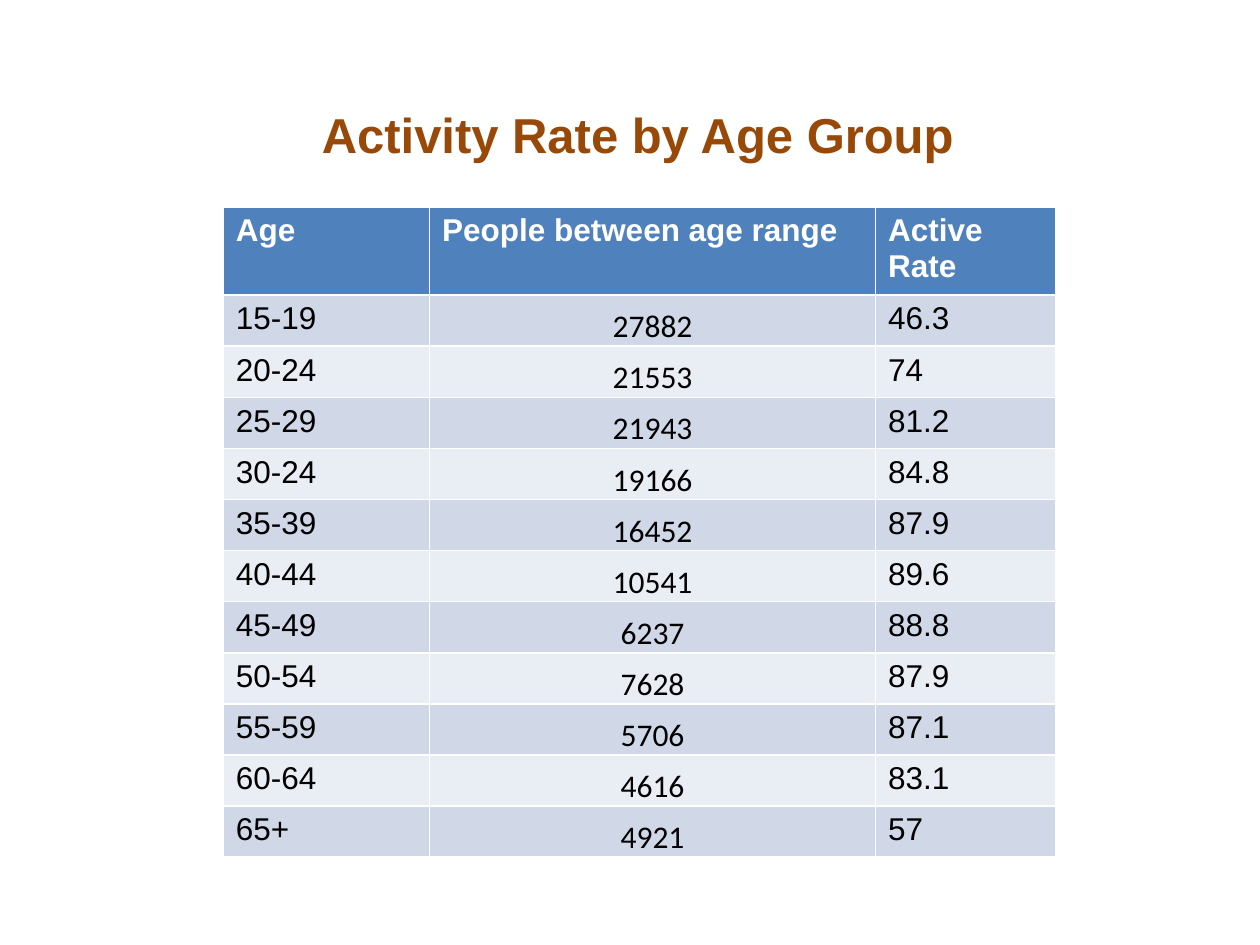
import pptx
import pptx.dml.color
import pptx.enum.text
import pptx.util

Cm = pptx.util.Cm
Pt = pptx.util.Pt
Align = pptx.enum.text.PP_ALIGN
Anchor = pptx.enum.text.MSO_ANCHOR

HEADINGS = ("Age", "People between age range", "Active Rate")
AGE_GROUPS = [
    ("15-19", "27882", "46.3"),
    ("20-24", "21553", "74"),
    ("25-29", "21943", "81.2"),
    ("30-24", "19166", "84.8"),
    ("35-39", "16452", "87.9"),
    ("40-44", "10541", "89.6"),
    ("45-49", "6237", "88.8"),
    ("50-54", "7628", "87.9"),
    ("55-59", "5706", "87.1"),
    ("60-64", "4616", "83.1"),
    ("65+", "4921", "57"),
]
COLUMN_WIDTHS = (4.16, 8.99, 3.63)
ROW_HEIGHT = 1.03
PEOPLE_COLUMN = 1
HEADER_FILL = "4F81BD"
BAND_FILLS = ("E9EDF4", "D0D8E8")


def color(value):
    return pptx.dml.color.RGBColor.from_string(value)


def style_font(para, name, size, value, bold=False):
    para.font.name = name
    para.font.size = Pt(size)
    para.font.bold = bold
    para.font.color.rgb = color(value)


def add_title(page, text):
    title = page.shapes.title
    title.left, title.top = Cm(1.3), Cm(1.98)
    title.width, title.height = Cm(23.11), Cm(1.45)
    title.text_frame.text = text
    title.text_frame.auto_size = pptx.enum.text.MSO_AUTO_SIZE.SHAPE_TO_FIT_TEXT
    para = title.text_frame.paragraphs[0]
    para.alignment = Align.CENTER
    style_font(para, "Arial", 28, "984807", bold=True)


def fill_cell(cell, text, fill):
    cell.text = text
    cell.fill.solid()
    cell.fill.fore_color.rgb = color(fill)
    return cell.text_frame.paragraphs[0]


def fill_header_cell(cell, text):
    para = fill_cell(cell, text, HEADER_FILL)
    style_font(para, "Arial", 18, "FFFFFF", bold=True)


def fill_body_cell(cell, text, fill, is_count):
    para = fill_cell(cell, text, fill)
    style_font(para, "Calibri" if is_count else "Arial", 18, "000000")
    if is_count:
        para.alignment = Align.CENTER
        cell.vertical_anchor = Anchor.BOTTOM
        cell.margin_left = cell.margin_right = cell.margin_top = Cm(0.03)
        cell.margin_bottom = 0


def add_rate_table(page):
    row_count = len(AGE_GROUPS) + 1
    frame = page.shapes.add_table(
        row_count, len(HEADINGS), Cm(4.5), Cm(4.17),
        Cm(sum(COLUMN_WIDTHS)), Cm(ROW_HEIGHT * row_count))
    table = frame.table
    for column, width in zip(table.columns, COLUMN_WIDTHS):
        column.width = Cm(width)
    for row in table.rows:
        row.height = Cm(ROW_HEIGHT)
    for index, heading in enumerate(HEADINGS):
        fill_header_cell(table.cell(0, index), heading)
    for row_index, group in enumerate(AGE_GROUPS, start=1):
        fill = BAND_FILLS[row_index % 2]
        for index, text in enumerate(group):
            fill_body_cell(table.cell(row_index, index), text, fill,
                           index == PEOPLE_COLUMN)


def main():
    deck = pptx.Presentation()
    deck.slide_width, deck.slide_height = Cm(25.4), Cm(19.05)
    page = deck.slides.add_slide(deck.slide_layouts.get_by_name("Title Only"))
    add_rate_table(page)
    add_title(page, "Activity Rate by Age Group")
    deck.save("out.pptx")


if __name__ == "__main__":
    main()
